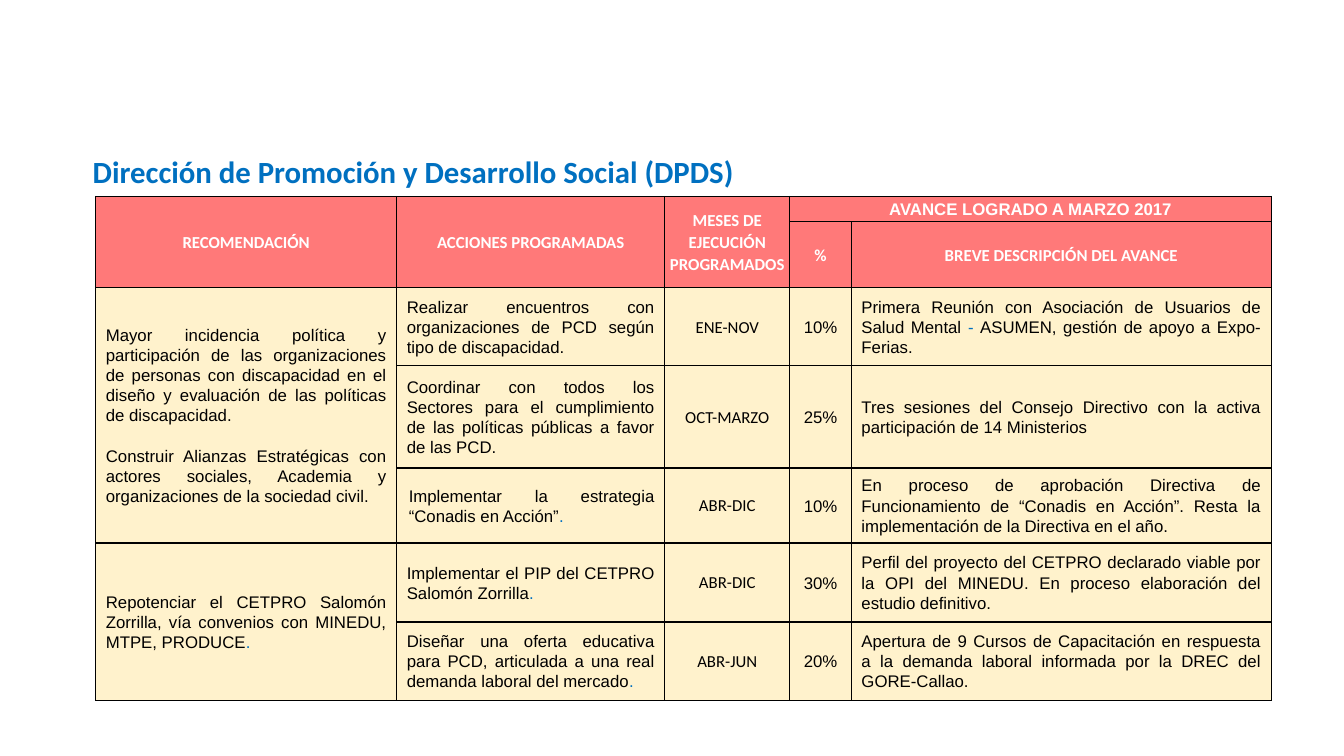
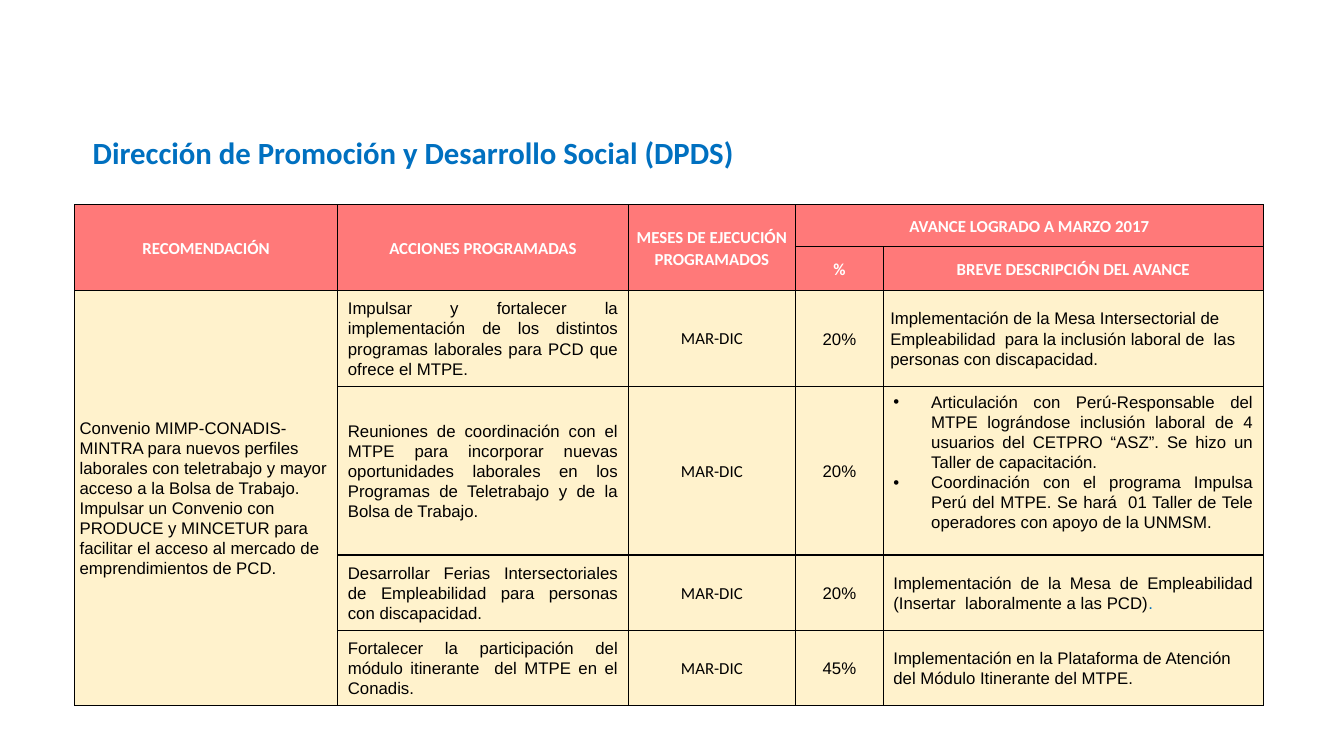
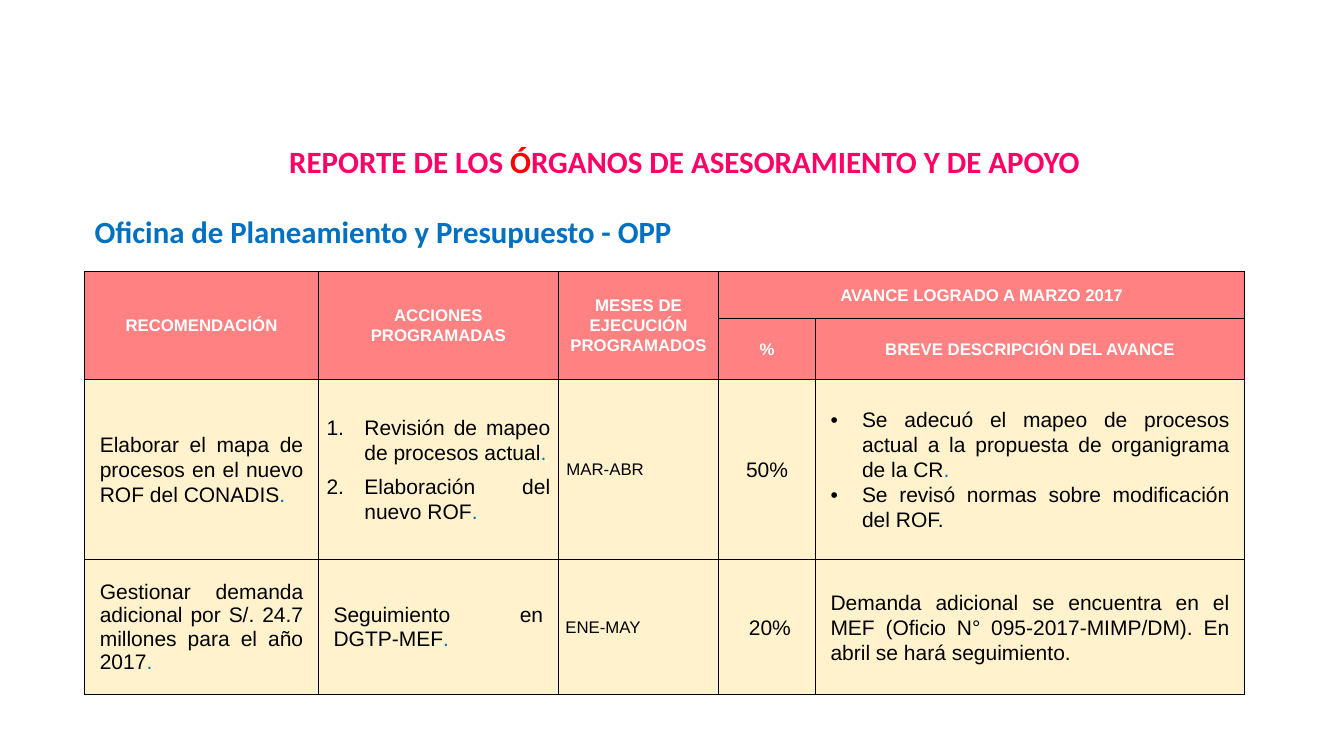
from dataclasses import dataclass, replace

from lxml.etree import SubElement
from pptx import Presentation
from pptx.dml.color import RGBColor
from pptx.enum.text import MSO_ANCHOR, MSO_AUTO_SIZE, PP_ALIGN
from pptx.oxml.ns import qn
from pptx.util import Pt

BLACK, WHITE, CREAM = "000000", "FFFFFF", "FFF2CC"
BLUE, PINK, RED = "0070C0", "FF0066", "FF0000"
CORAL, ROSE = "FF7979", "FF8181"
HEADS = (
    "RECOMENDACIÓN",
    "ACCIONES PROGRAMADAS",
    "MESES DE EJECUCIÓN PROGRAMADOS",
    "AVANCE LOGRADO A MARZO 2017",
)
SUBS = ("%", "BREVE DESCRIPCIÓN DEL AVANCE")
OFFICE = "Dirección de Promoción y Desarrollo Social (DPDS)"


@dataclass(frozen=True)
class Look:
    font: str = "Arial"
    size: float = 12
    color: str = BLACK
    accent: str = BLUE
    bold: bool = False
    align: PP_ALIGN = PP_ALIGN.JUSTIFY
    pad: tuple[float, float] = (7.2, 3.6)
    lines: float = 1.07
    gap: float = 0
    left: float = 0
    hang: float = 0
    mark: str = ""
    anchor: MSO_ANCHOR = MSO_ANCHOR.MIDDLE


@dataclass(frozen=True)
class Cell:
    text: str
    look: Look


@dataclass(frozen=True)
class Grid:
    left: float
    top: float
    cols: tuple[float, ...]
    rows: tuple[float, ...]
    fill: str
    heads: tuple[Look, ...]
    body: list[list[Cell | None]]


HEAD = Look(font="Calibri", color=WHITE, bold=True, align=PP_ALIGN.CENTER, pad=(3.6, 0))
ARIAL = replace(HEAD, font="Arial")
WIDE = replace(ARIAL, pad=(5.8, 0))
TITLE = Look(font="Calibri", size=22, color=BLUE, bold=True, align=PP_ALIGN.LEFT, lines=1)
BANNER = replace(TITLE, size=22.1, color=PINK, accent=RED)
BODY = Look()
NUDGE = replace(BODY, left=1.4)
SPLIT = replace(BODY, gap=14.8)
PLAIN = replace(BODY, align=PP_ALIGN.LEFT)
TIGHT = replace(PLAIN, pad=(3.6, 0))
MONTH = Look(font="Calibri", align=PP_ALIGN.CENTER, pad=(3.6, 0))
RATE = replace(MONTH, font="Arial")
DOTS = replace(BODY, left=27, hang=-27, mark="•", anchor=MSO_ANCHOR.TOP)
LARGE = replace(BODY, size=15, pad=(10.8, 10.8))
DENSE = replace(LARGE, lines=1)
STEPS = replace(LARGE, pad=(5.8, 0), left=27, hang=-27, mark="1.", gap=6)
POINTS = replace(LARGE, left=22.5, hang=-22.5, mark="•")
TERM = replace(BODY, pad=(5.8, 0))
SHARE = replace(RATE, size=15)


def rgb(code: str) -> RGBColor:
    return RGBColor.from_string(code)


def write(frame, text: str, look: Look) -> None:
    """Fill a text frame: one paragraph a line, accent colour between asterisks."""
    for i, line in enumerate(text.split("\n")):
        para = frame.paragraphs[0] if i == 0 else frame.add_paragraph()
        para.alignment = look.align
        para.line_spacing = look.lines
        if i and look.gap:
            para.space_before = Pt(look.gap)
        props = para._p.get_or_add_pPr()
        if look.left:
            props.set("marL", str(Pt(look.left)))
            props.set("indent", str(Pt(look.hang)))
        if look.mark == "•":
            SubElement(props, qn("a:buFont"), typeface="Arial")
            SubElement(props, qn("a:buChar"), char=look.mark)
        elif look.mark:
            SubElement(props, qn("a:buAutoNum"), type="arabicPeriod")
        font = para.font
        font.name, font.size, font.bold = look.font, Pt(look.size), look.bold
        font.color.rgb = rgb(look.color)
        for j, part in enumerate(line.split("*")):
            if part:
                run = para.add_run()
                run.text = part
                if j % 2:
                    run.font.color.rgb = rgb(look.accent)


def place(shape, text: str, look: Look, left: float, top: float, width: float) -> None:
    shape.left, shape.top = Pt(left), Pt(top)
    shape.width, shape.height = Pt(width), Pt(34)
    frame = shape.text_frame
    frame.word_wrap = True
    frame.auto_size = MSO_AUTO_SIZE.NONE
    frame.vertical_anchor = MSO_ANCHOR.TOP
    write(frame, text, look)


def paint(cell, fill: str) -> None:
    """Give a cell thin black borders, then its fill."""
    props = cell._tc.get_or_add_tcPr()
    for side in ("lnL", "lnR", "lnT", "lnB"):
        edge = SubElement(props, qn(f"a:{side}"), w=str(Pt(1)))
        solid = SubElement(edge, qn("a:solidFill"))
        SubElement(solid, qn("a:srgbClr"), val=BLACK)
    cell.fill.solid()
    cell.fill.fore_color.rgb = rgb(fill)


def draw(slide, grid: Grid) -> None:
    table = slide.shapes.add_table(
        len(grid.rows), len(grid.cols), Pt(grid.left), Pt(grid.top),
        Pt(sum(grid.cols)), Pt(sum(grid.rows)),
    ).table
    table.first_row = table.horz_banding = False
    for col, width in zip(table.columns, grid.cols):
        col.width = Pt(width)
    for row, height in zip(table.rows, grid.rows):
        row.height = Pt(height)

    tops = [Cell(text, look) for text, look in zip(HEADS, grid.heads)]
    subs = [Cell(text, grid.heads[0]) for text in SUBS]
    cells = [[*tops, None], [None] * 3 + subs, *grid.body]
    for r, row in enumerate(cells):
        for c, item in enumerate(row):
            cell = table.cell(r, c)
            paint(cell, grid.fill if r < 2 else CREAM)
            if item is None:
                continue
            look = item.look
            cell.margin_left = cell.margin_right = Pt(look.pad[0])
            cell.margin_top = cell.margin_bottom = Pt(look.pad[1])
            cell.vertical_anchor = look.anchor
            write(cell.text_frame, item.text, look)

    table.cell(0, 3).merge(table.cell(0, 4))
    for c in range(3):
        table.cell(0, c).merge(table.cell(1, c))
    starts = [r for r in range(2, len(cells)) if cells[r][0]]
    for first, after in zip(starts, starts[1:] + [len(cells)]):
        if after - first > 1:
            table.cell(first, 0).merge(table.cell(after - 1, 0))


SOCIAL = Grid(
    68.4, 140.4, (215, 191.5, 89.3, 44, 300), (18, 46.5, 56, 73, 53.5, 56.5, 56),
    CORAL, (HEAD, HEAD, HEAD, ARIAL),
    [
        [
            Cell("Mayor incidencia política y participación de las organizaciones de personas con discapacidad en el diseño y evaluación de las políticas de discapacidad.\nConstruir Alianzas Estratégicas con actores sociales, Academia y organizaciones de la sociedad civil.", SPLIT),
            Cell("Realizar encuentros con organizaciones de PCD según tipo de discapacidad.", BODY),
            Cell("ENE-NOV", MONTH),
            Cell("10%", RATE),
            Cell("Primera Reunión con Asociación de Usuarios de Salud Mental *- *ASUMEN, gestión de apoyo a Expo-Ferias.", BODY),
        ],
        [
            None,
            Cell("Coordinar con todos los Sectores para el cumplimiento de las políticas públicas a favor de las PCD.", BODY),
            Cell("OCT-MARZO", MONTH),
            Cell("25%", RATE),
            Cell("Tres sesiones del Consejo Directivo con la activa participación de 14 Ministerios", BODY),
        ],
        [
            None,
            Cell("Implementar la estrategia “Conadis en Acción”*.*", NUDGE),
            Cell("ABR-DIC", MONTH),
            Cell("10%", RATE),
            Cell("En proceso de aprobación Directiva de Funcionamiento de “Conadis en Acción”. Resta la implementación de la Directiva en el año.", BODY),
        ],
        [
            Cell("Repotenciar el CETPRO Salomón Zorrilla, vía convenios con MINEDU, MTPE, PRODUCE*.*", BODY),
            Cell("Implementar el PIP del CETPRO Salomón Zorrilla*.*", BODY),
            Cell("ABR-DIC", MONTH),
            Cell("30%", RATE),
            Cell("Perfil del proyecto del CETPRO declarado viable por la OPI del MINEDU. En proceso elaboración del estudio definitivo.", BODY),
        ],
        [
            None,
            Cell("Diseñar una oferta educativa para PCD, articulada a una real demanda laboral del mercado*.*", BODY),
            Cell("ABR-JUN", MONTH),
            Cell("20%", RATE),
            Cell("Apertura de 9 Cursos de Capacitación en respuesta a la demanda laboral informada por la DREC del GORE-Callao.", BODY),
        ],
    ],
)

LABOR = Grid(
    53.3, 146.2, (188, 207.5, 119.5, 62.7, 271.5), (30, 31, 68.5, 120.5, 54, 53.5),
    CORAL, (HEAD,) * 4,
    [
        [
            Cell("Convenio MIMP-CONADIS-MINTRA para nuevos perfiles laborales con teletrabajo y mayor acceso a la Bolsa de Trabajo.\nImpulsar un Convenio con PRODUCE y MINCETUR para facilitar el acceso al mercado de emprendimientos de PCD.", TIGHT),
            Cell("Impulsar y fortalecer la implementación de los distintos programas laborales para PCD que ofrece el MTPE.", BODY),
            Cell("MAR-DIC", MONTH),
            Cell("20%", RATE),
            Cell("Implementación de la Mesa Intersectorial de Empleabilidad  para la inclusión laboral de  las personas con discapacidad.", replace(TIGHT, left=1.4)),
        ],
        [
            None,
            Cell("Reuniones de coordinación con el MTPE para incorporar nuevas oportunidades laborales en los Programas de Teletrabajo y de la Bolsa de Trabajo.", BODY),
            Cell("MAR-DIC", MONTH),
            Cell("20%", RATE),
            Cell("Articulación con Perú-Responsable del MTPE lográndose inclusión laboral de 4 usuarios del CETPRO “ASZ”. Se hizo un Taller de capacitación.\nCoordinación con el programa Impulsa Perú del MTPE. Se hará  01 Taller de Tele operadores con apoyo de la UNMSM.", DOTS),
        ],
        [
            None,
            Cell("Desarrollar Ferias Intersectoriales de Empleabilidad para personas con discapacidad.", BODY),
            Cell("MAR-DIC", MONTH),
            Cell("20%", RATE),
            Cell("Implementación de la Mesa de Empleabilidad (Insertar  laboralmente a las PCD)*.*", BODY),
        ],
        [
            None,
            Cell("Fortalecer la participación del módulo itinerante  del MTPE en el Conadis.", BODY),
            Cell("MAR-DIC", MONTH),
            Cell("45%", RATE),
            Cell("Implementación en la Plataforma de Atención del Módulo Itinerante del MTPE.", PLAIN),
        ],
    ],
)

BUDGET = Grid(
    60.5, 193.7, (167, 171.4, 114.5, 69.1, 306.7), (34, 43, 129, 96.5),
    ROSE, (WIDE,) * 4,
    [
        [
            Cell("Elaborar el mapa de procesos en el nuevo ROF del CONADIS*.*", LARGE),
            Cell("Revisión de mapeo de procesos actual*.*\nElaboración del nuevo ROF*.*", STEPS),
            Cell("MAR-ABR", TERM),
            Cell("50%", SHARE),
            Cell("Se adecuó el mapeo de procesos actual a la propuesta de organigrama de la CR*.*\nSe revisó normas sobre modificación del ROF.", POINTS),
        ],
        [
            Cell("Gestionar demanda adicional por S/. 24.7 millones para el año 2017*.*", DENSE),
            Cell("Seguimiento en DGTP-MEF*.*", DENSE),
            Cell("ENE-MAY", replace(TERM, pad=(5, 0), lines=1)),
            Cell("20%", replace(SHARE, left=4)),
            Cell("Demanda adicional se encuentra en el MEF (Oficio N° 095-2017-MIMP/DM). En abril se hará seguimiento.", LARGE),
        ],
    ],
)


def main() -> None:
    deck = Presentation()
    deck.slide_width, deck.slide_height = Pt(960), Pt(540)
    sheets = (
        (OFFICE, TITLE, 59, 105.8, 478, SOCIAL),
        (OFFICE, TITLE, 59, 92.2, 478, LABOR),
        ("REPORTE DE LOS *Ó*RGANOS DE ASESORAMIENTO Y DE APOYO", BANNER, 199.4, 98, 617, BUDGET),
    )
    for text, look, left, top, width, grid in sheets:
        slide = deck.slides.add_slide(deck.slide_layouts[5])
        place(slide.shapes.title, text, look, left, top, width)
        draw(slide, grid)
    label = slide.shapes.add_textbox(0, 0, 0, 0)
    place(label, "Oficina de Planeamiento y Presupuesto - OPP", TITLE, 60.5, 148.3, 432)
    deck.save("out.pptx")


if __name__ == "__main__":
    main()
